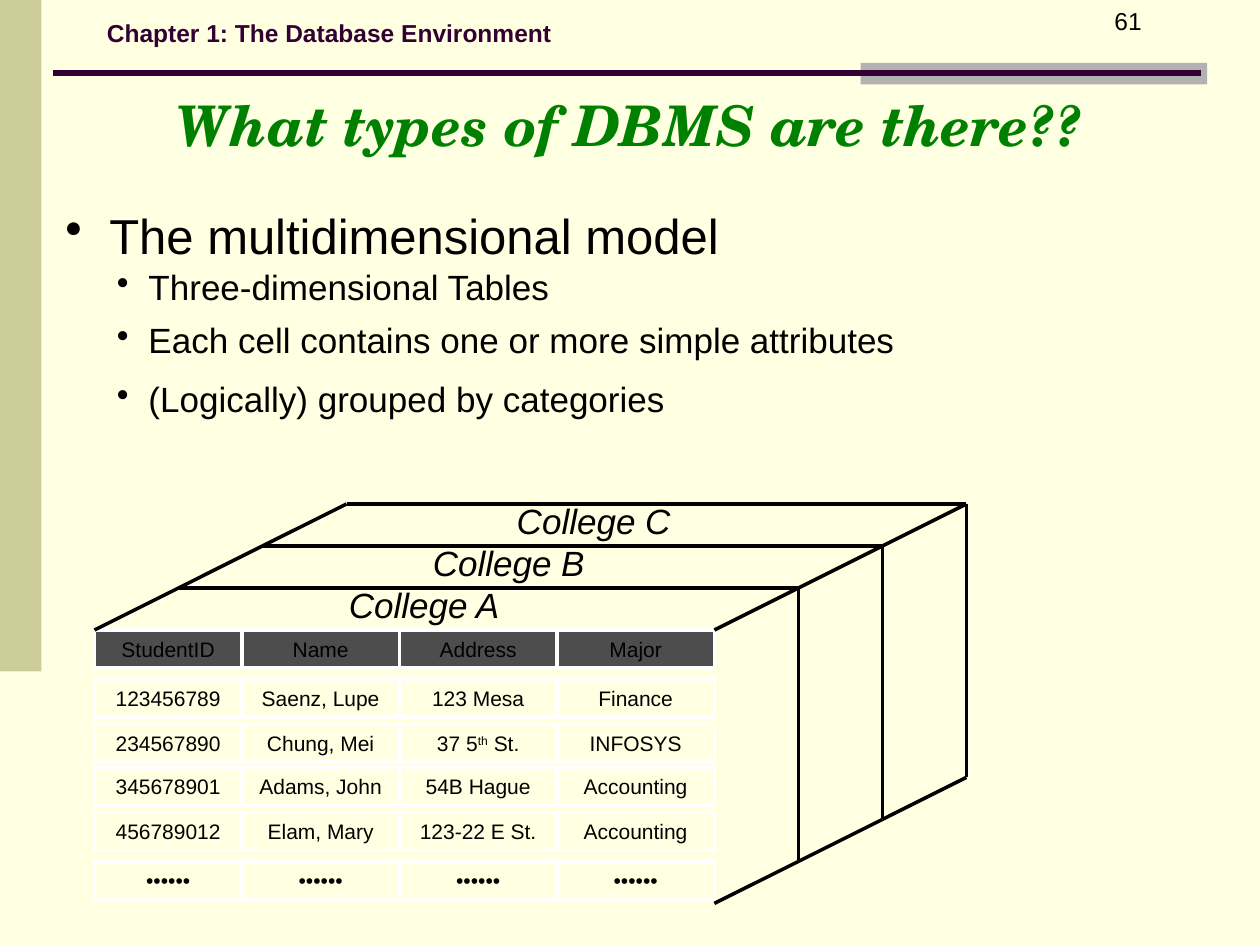
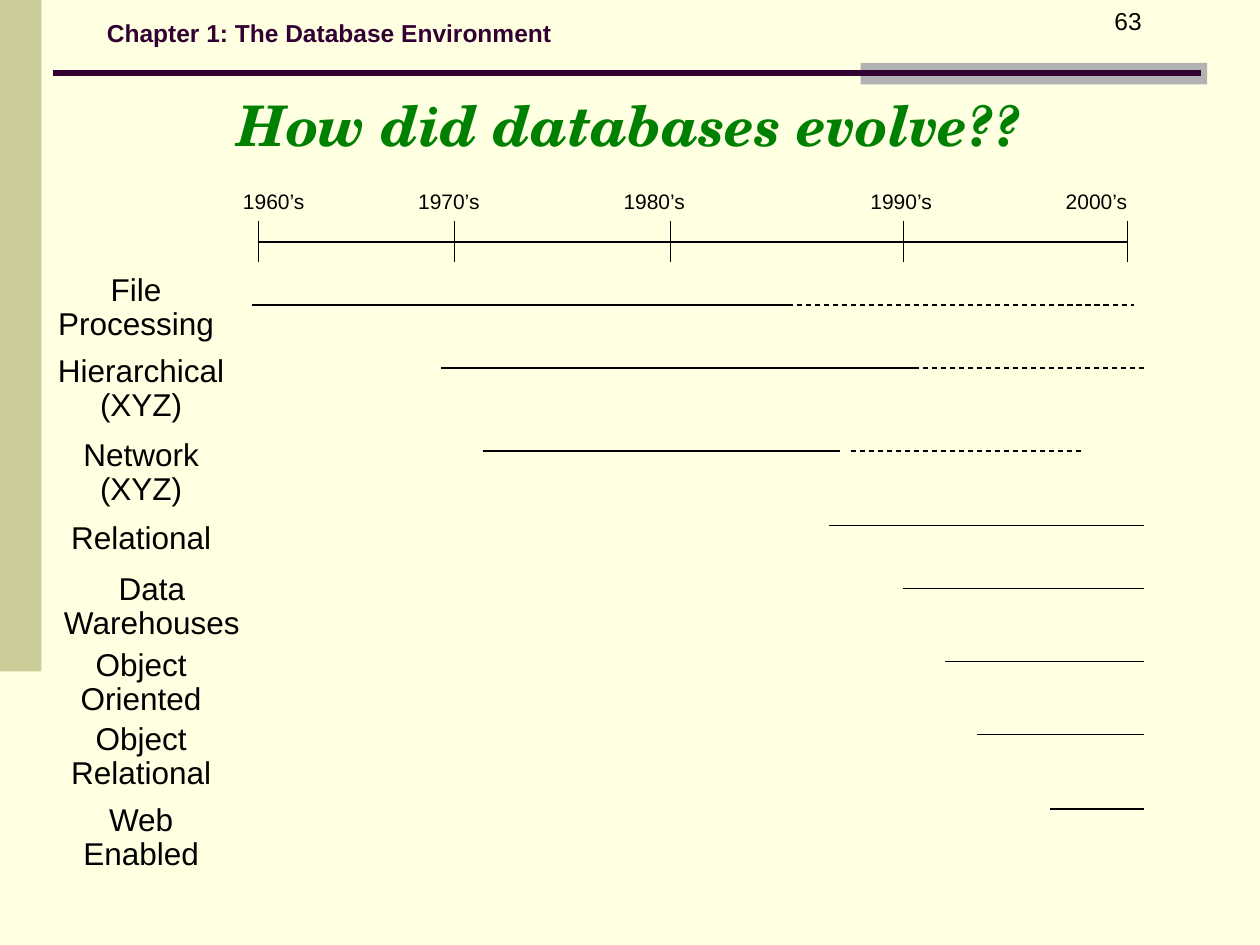
from dataclasses import dataclass
from typing import Optional

import pptx
import pptx.dml.color
import pptx.enum.dml
import pptx.enum.shapes
import pptx.enum.text
import pptx.oxml
import pptx.oxml.ns
import pptx.util
from pptx.util import Inches

# Shared colours and fonts
RGBColor = pptx.dml.color.RGBColor
CREAM = RGBColor(0xFF, 0xFF, 0xE1)
KHAKI = RGBColor(0xCC, 0xCC, 0x99)
SILVER = RGBColor(0xB2, 0xB2, 0xB2)
PLUM = RGBColor(0x33, 0x00, 0x33)
GREEN = RGBColor(0x00, 0x80, 0x00)
CHARCOAL = RGBColor(0x4D, 0x4D, 0x4D)
WHITE = RGBColor(0xFF, 0xFF, 0xFF)
BLACK = RGBColor(0x00, 0x00, 0x00)
BODY_FONT = "Arial"
TITLE_FONT = "TeX Gyre Schola"

Align = pptx.enum.text.PP_ALIGN
Anchor = pptx.enum.text.MSO_ANCHOR
TITLE_ONLY = 5


@dataclass(frozen=True)
class Style:
    size: float
    color: RGBColor = BLACK
    font: str = BODY_FONT
    bold: bool = False
    italic: bool = False
    align: Align = Align.LEFT
    spacing: Optional[float] = None
    bullet_indent: float = 0


@dataclass(frozen=True)
class Area:
    left: float
    top: float
    width: float
    height: float

    def inches(self) -> tuple:
        return tuple(Inches(n) for n in (self.left, self.top, self.width, self.height))


@dataclass(frozen=True)
class Bullet:
    text: str
    area: Area
    style: Style


@dataclass(frozen=True)
class Decade:
    label: str
    label_left: float
    tick: float


@dataclass(frozen=True)
class Era:
    """A kind of database: its label and the spans where it is in use."""
    label: str
    top: float
    line_y: float
    solid: tuple[float, float]
    dashed: Optional[tuple[float, float]] = None
    width: float = 1.58
    height: float = 0.65


TITLE = Style(32, GREEN, TITLE_FONT, bold=True, italic=True, align=Align.CENTER)
CHAPTER = Style(14, PLUM, bold=True)
PAGE_NUMBER = Style(14, align=Align.RIGHT)
TOPIC = Style(28, bullet_indent=0.35)
POINT = Style(20, spacing=0.85, bullet_indent=0.25)
CELL = Style(12, align=Align.CENTER)
COLLEGE = Style(20, italic=True)
DECADE = Style(12)
ERA = Style(18, align=Align.CENTER, spacing=0.9)


# Drawing helpers
def write(frame, text: str, style: Style, anchor: Anchor = Anchor.TOP) -> None:
    """Fill a frame; '^' toggles superscript and a newline breaks the line."""
    frame.word_wrap = True
    frame.auto_size = pptx.enum.text.MSO_AUTO_SIZE.NONE
    frame.vertical_anchor = anchor
    para = frame.paragraphs[0]
    para.alignment = style.align
    if style.spacing:
        para.line_spacing = style.spacing
    if style.bullet_indent:
        properties = para._p.get_or_add_pPr()
        properties.set("marL", str(Inches(style.bullet_indent)))
        properties.set("indent", str(-Inches(style.bullet_indent)))
        bullet = pptx.oxml.parse_xml(
            f'<a:buChar {pptx.oxml.ns.nsdecls("a")} char="•"/>')
        properties.append(bullet)
    for line_index, line in enumerate(text.split("\n")):
        if line_index:
            para.add_line_break()
        for part_index, part in enumerate(line.split("^")):
            span = para.add_run()
            span.text = part
            span.font.name = style.font
            span.font.size = pptx.util.Pt(style.size)
            span.font.bold = style.bold
            span.font.italic = style.italic
            span.font.color.rgb = style.color
            if part_index % 2:
                span._r.get_or_add_rPr().set("baseline", "30000")


def add_text(page, area: Area, text: str, style: Style,
             anchor: Anchor = Anchor.TOP) -> None:
    box = page.shapes.add_textbox(*area.inches())
    write(box.text_frame, text, style, anchor)


def add_box(page, area: Area, fill: Optional[RGBColor],
            outline: Optional[RGBColor] = None):
    box = page.shapes.add_shape(pptx.enum.shapes.MSO_SHAPE.RECTANGLE, *area.inches())
    box.shadow.inherit = False
    if fill is None:
        box.fill.background()
    else:
        box.fill.solid()
        box.fill.fore_color.rgb = fill
    if outline is None:
        box.line.fill.background()
    else:
        box.line.color.rgb = outline
        box.line.width = pptx.util.Pt(2)
    return box


def add_line(page, start: tuple[float, float], end: tuple[float, float],
             width: float, color: RGBColor = BLACK, dashed: bool = False) -> None:
    line = page.shapes.add_connector(
        pptx.enum.shapes.MSO_CONNECTOR.STRAIGHT,
        *(Inches(n) for n in (*start, *end)))
    line.line.color.rgb = color
    line.line.width = pptx.util.Pt(width)
    if dashed:
        line.line.dash_style = pptx.enum.dml.MSO_LINE.DASH
    line._element.spPr.append(pptx.oxml.parse_xml(
        f'<a:effectLst {pptx.oxml.ns.nsdecls("a")}/>'))


def add_page(deck, title: str, number: int):
    """Start a page with the bands, chapter line, page number and title."""
    page = deck.slides.add_slide(deck.slide_layouts[TITLE_ONLY])
    add_box(page, Area(0, 0, 0.33, 5.33), KHAKI)
    add_box(page, Area(6.83, 0.5, 2.75, 0.17), SILVER)
    add_line(page, (0.42, 0.58), (9.53, 0.58), 3.5, PLUM)
    add_text(page, Area(0.75, 0.08, 8.5, 0.36),
             "Chapter 1: The Database Environment", CHAPTER, Anchor.MIDDLE)
    add_text(page, Area(7.08, 0, 2.08, 0.5), str(number), PAGE_NUMBER)
    heading = page.shapes.title
    heading.left, heading.top, heading.width, heading.height = Area(
        0, 0.67, 10, 0.64).inches()
    write(heading.text_frame, title, TITLE)
    return page


# Multidimensional model
BULLETS = (
    Bullet("The multidimensional model", Area(0.42, 1.58, 5.67, 0.57), TOPIC),
    Bullet("Three-dimensional Tables", Area(0.83, 2.11, 8.08, 0.39), POINT),
    Bullet("Each cell contains one or more simple attributes",
           Area(0.83, 2.53, 8.08, 0.39), POINT),
    Bullet("(Logically) grouped by categories", Area(0.83, 3, 8.08, 0.39), POINT),
)
COLUMN_WIDTHS = (1.17, 1.25, 1.25, 1.25)
ROW_TOPS = (5, 5.39, 5.75, 6.09, 6.45, 6.84)
ROW_HEIGHT = 0.3
STUDENTS = (
    ("StudentID", "Name", "Address", "Major"),
    ("123456789", "Saenz, Lupe", "123 Mesa", "Finance"),
    ("234567890", "Chung, Mei", "37 5^th^ St.", "INFOSYS"),
    ("345678901", "Adams, John", "54B Hague", "Accounting"),
    ("456789012", "Elam, Mary", "123-22 E St.", "Accounting"),
    ("••••••",) * 4,
)
COLLEGES = ("College A", "College B", "College C")
FRONT = Area(0.75, 5, sum(COLUMN_WIDTHS), 2.17)
STEP_X, STEP_Y = 2 / 3, -1 / 3


def draw_students(page) -> None:
    for row, (top, values) in enumerate(zip(ROW_TOPS, STUDENTS)):
        left = FRONT.left
        for width, value in zip(COLUMN_WIDTHS, values):
            cell = add_box(page, Area(left, top, width, ROW_HEIGHT),
                           None if row else CHARCOAL, WHITE)
            write(cell.text_frame, value, CELL)
            left += width


def draw_college(page, depth: int, name: str) -> None:
    """Draw one slab of the block behind the student table."""
    def corners(level: int) -> tuple:
        left = FRONT.left + level * STEP_X
        top = FRONT.top + level * STEP_Y
        right = left + FRONT.width
        return (left, top), (right, top), (right, top + FRONT.height)

    near, far = corners(depth), corners(depth + 1)
    for edge in (*zip(near, far), (far[0], far[1]), (far[1], far[2])):
        add_line(page, *edge, 2)
    add_text(page, Area(2.67 + depth * STEP_X, 4.58 + depth * STEP_Y, 2.83, 0.43),
             name, COLLEGE)


def build_model_page(deck) -> None:
    page = add_page(deck, "What types of DBMS are there??", 61)
    for bullet in BULLETS:
        add_text(page, bullet.area, bullet.text, bullet.style)
    draw_students(page)
    for depth, name in enumerate(COLLEGES):
        draw_college(page, depth, name)


# Timeline of databases
DECADES = (
    Decade("1960’s", 1.83, 2.05),
    Decade("1970’s", 3.22, 3.61),
    Decade("1980’s", 4.85, 5.32),
    Decade("1990’s", 6.81, 7.17),
    Decade("2000’s", 8.36, 8.95),
)
AXIS_Y = 1.92
ERAS = (
    Era("File Processing", 2.13, 2.42, (2, 6.25), (6.25, 9), width=1.5),
    Era("Hierarchical\n(XYZ)", 2.77, 2.92, (3.5, 7.25), (7.25, 9.08)),
    Era("Network (XYZ)", 3.44, 3.58, (3.83, 6.67), (6.75, 8.58)),
    Era("Relational", 4.1, 4.17, (6.58, 9.08), height=0.37),
    Era("Data Warehouses", 4.5, 4.67, (7.17, 9.08), width=1.75),
    Era("Object Oriented", 5.1, 5.25, (7.5, 9.08)),
    Era("Object Relational", 5.69, 5.83, (7.75, 9.08)),
    Era("Web Enabled", 6.33, 6.42, (8.33, 9.08)),
)


def draw_span(page, span: tuple[float, float], y: float, dashed: bool = False) -> None:
    add_line(page, (span[0], y), (span[1], y), 0.75, dashed=dashed)


def build_timeline_page(deck) -> None:
    page = add_page(deck, "How did databases evolve??", 63)
    draw_span(page, (DECADES[0].tick, DECADES[-1].tick), AXIS_Y)
    for decade in DECADES:
        add_text(page, Area(decade.label_left, 1.45, 0.98, 0.3), decade.label, DECADE)
        add_line(page, (decade.tick, 2.08), (decade.tick, 1.75), 0.75)
    for era in ERAS:
        add_text(page, Area(0.33, era.top, era.width, era.height), era.label, ERA)
        draw_span(page, era.solid, era.line_y)
        if era.dashed:
            draw_span(page, era.dashed, era.line_y, dashed=True)


def main() -> None:
    deck = pptx.Presentation()
    deck.slide_width, deck.slide_height = Inches(10), Inches(7.5)
    backdrop = deck.slide_master.background.fill
    backdrop.solid()
    backdrop.fore_color.rgb = CREAM
    build_model_page(deck)
    build_timeline_page(deck)
    deck.save("out.pptx")


if __name__ == "__main__":
    main()
